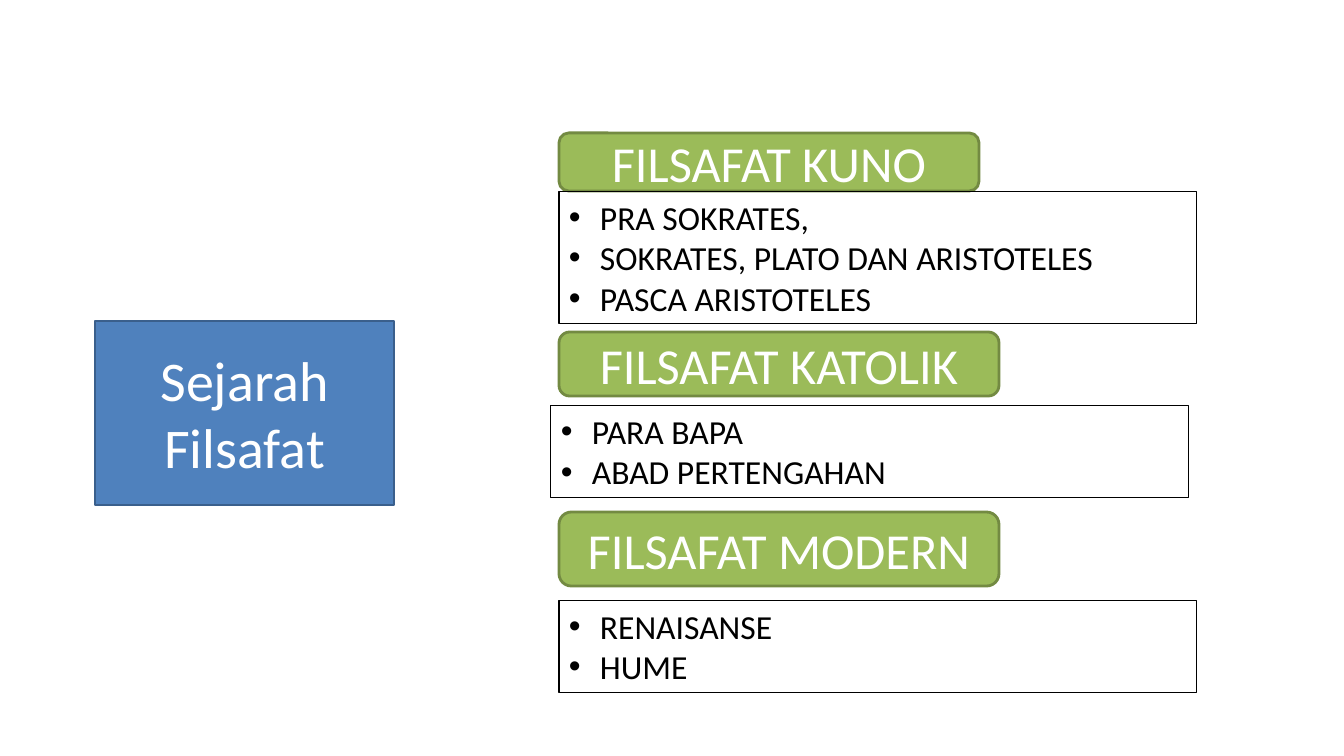
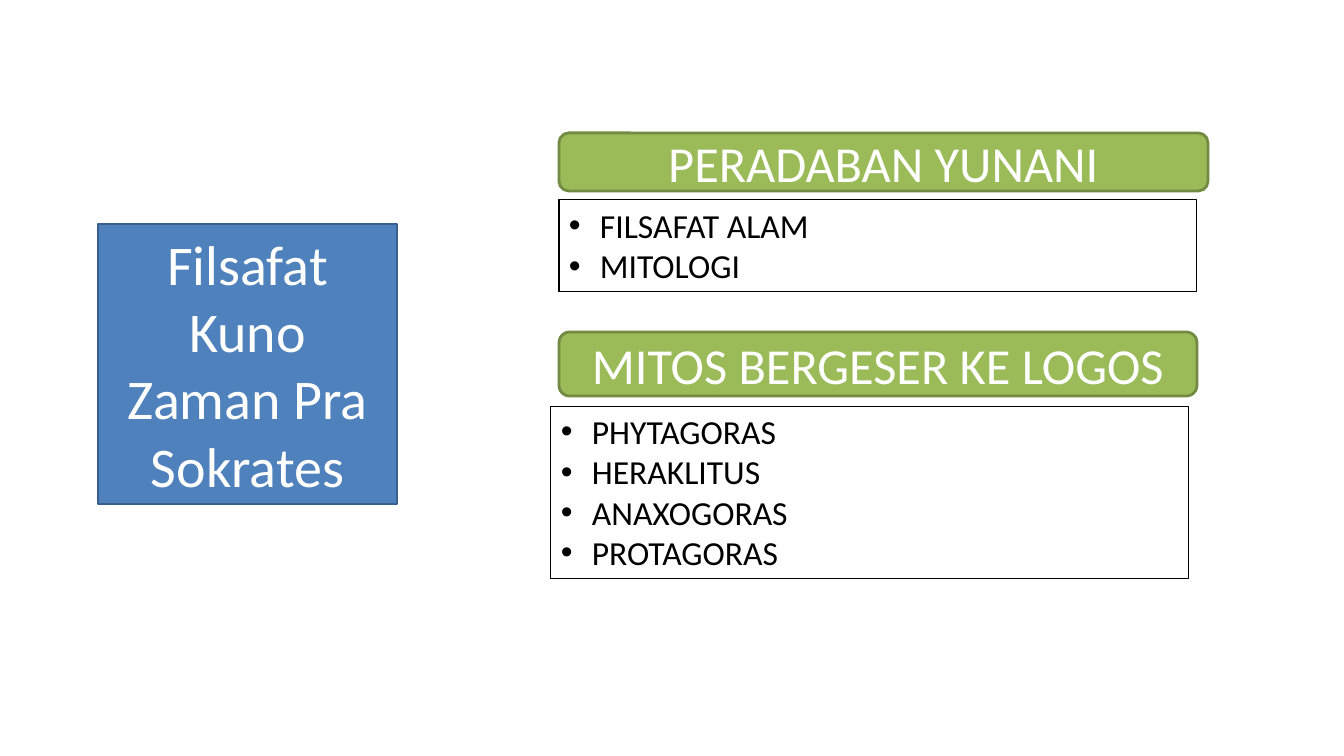
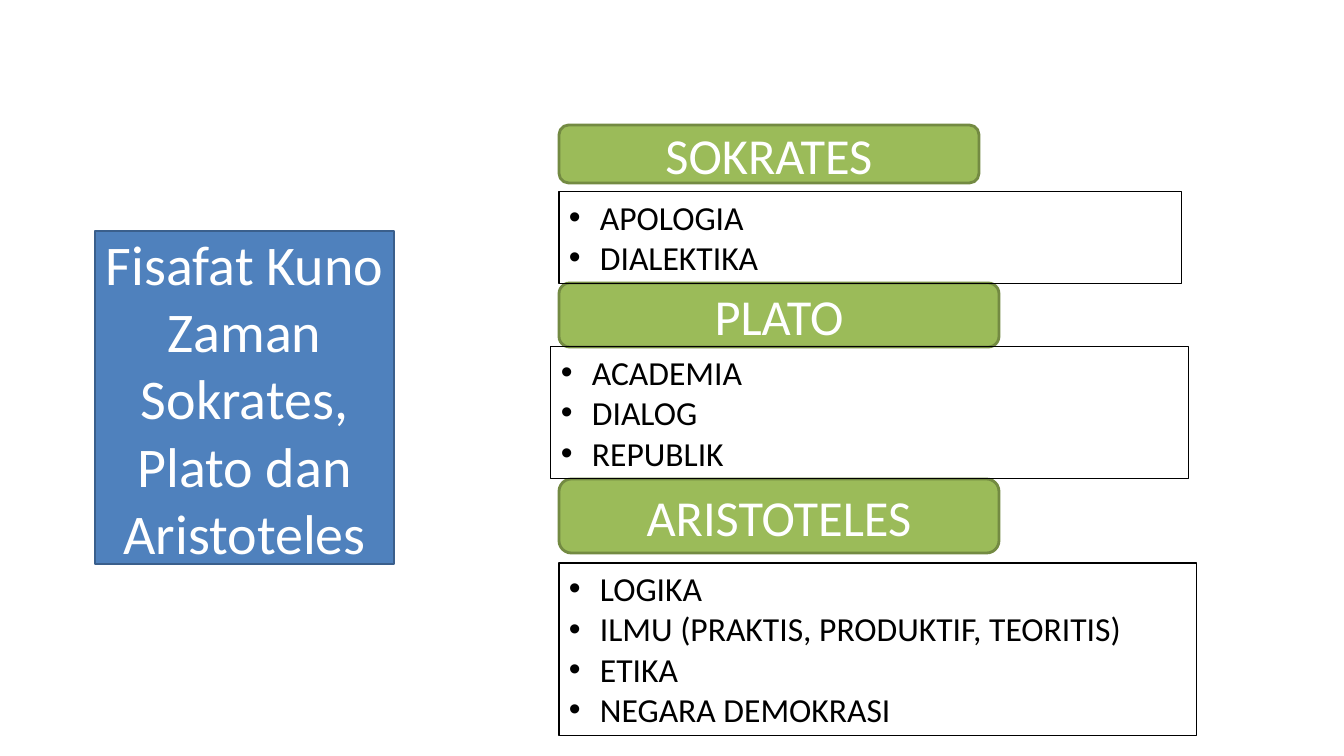
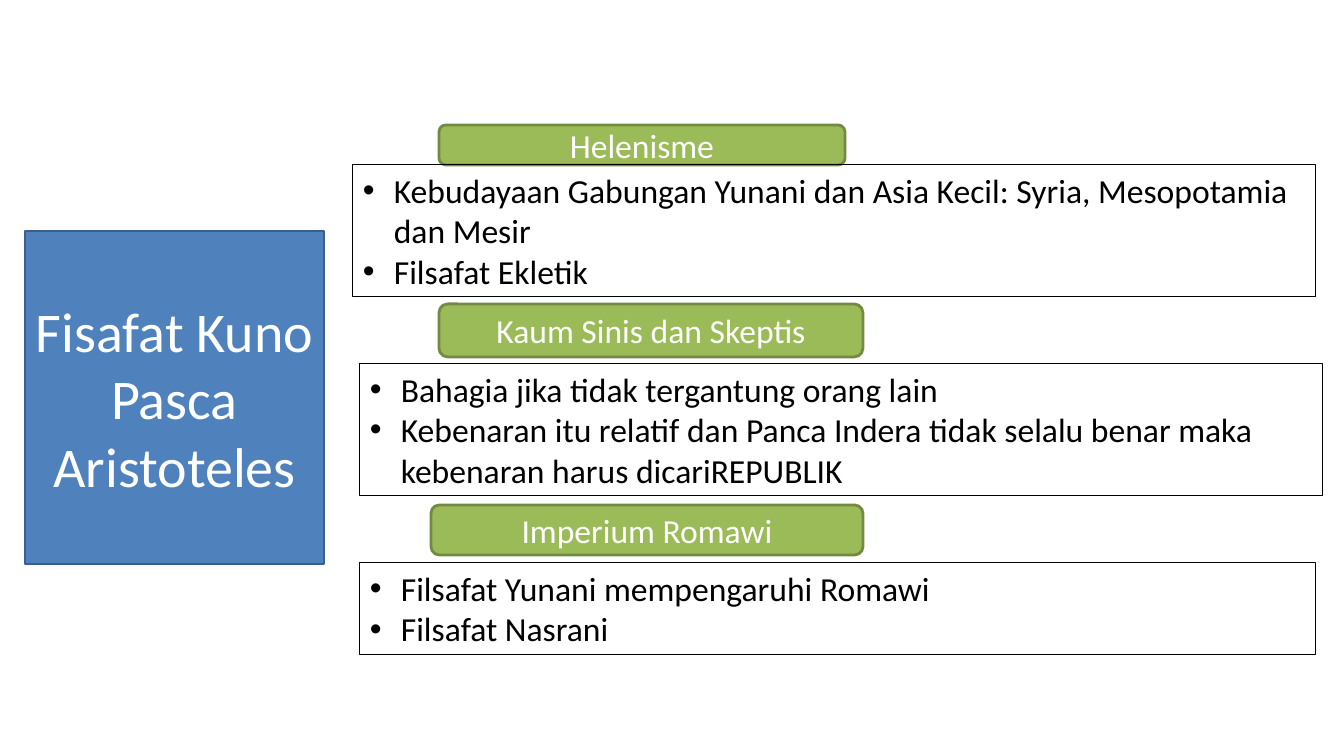
import pptx
import pptx.dml.color
import pptx.enum.shapes
import pptx.enum.text
import pptx.oxml.ns
import pptx.util
from lxml import etree

RGBColor = pptx.dml.color.RGBColor
BLUE = RGBColor(0x4F, 0x81, 0xBD)
BLUE_LINE = RGBColor(0x3A, 0x5F, 0x8C)
GREEN = RGBColor(0x9B, 0xBB, 0x59)
GREEN_LINE = RGBColor(0x73, 0x8A, 0x42)
WHITE = RGBColor(0xFF, 0xFF, 0xFF)
BLACK = RGBColor(0x00, 0x00, 0x00)

FONT = "Calibri"
EMU_PER_PX = 12192000 / 1344
BULLET_INDENT = 31
TITLE_W = 299
TITLE_ONLY = 5

ALIGN = pptx.enum.text.PP_ALIGN
ANCHOR = pptx.enum.text.MSO_ANCHOR
AUTO_SIZE = pptx.enum.text.MSO_AUTO_SIZE


def px(*lengths):
    return [pptx.util.Emu(round(n * EMU_PER_PX)) for n in lengths]


def write(sp, lines, size=24, color=WHITE, line_color=BLACK, line_width=2, fill=None,
          align=ALIGN.CENTER, anchor=ANCHOR.MIDDLE, fit=AUTO_SIZE.NONE, bullet=False):
    """Colour a shape and fill it with one paragraph per line."""
    if fill is None:
        sp.fill.background()
    else:
        sp.fill.solid()
        sp.fill.fore_color.rgb = fill
    sp.line.color.rgb = line_color
    sp.line.width = pptx.util.Pt(line_width)
    tf = sp.text_frame
    tf.word_wrap = True
    tf.auto_size = fit
    tf.vertical_anchor = anchor
    for i, line in enumerate(lines):
        p = tf.add_paragraph() if i else tf.paragraphs[0]
        p.alignment = align
        if bullet:
            indent = px(BULLET_INDENT)[0]
            pPr = p._p.get_or_add_pPr()
            pPr.set("marL", str(indent))
            pPr.set("indent", str(-indent))
            etree.SubElement(pPr, pptx.oxml.ns.qn("a:buFont")).set("typeface", "Arial")
            etree.SubElement(pPr, pptx.oxml.ns.qn("a:buChar")).set("char", "•")
        r = p.add_run()
        r.text = line
        r.font.name = FONT
        r.font.size = pptx.util.Pt(size)
        r.font.color.rgb = color


# Each slide: title, its (left, top, height), heading size, and its groups.
# Each group: heading, heading box, list box, list items; boxes are left, top, width, height.
SLIDES = [
    ("Sejarah Filsafat", (95, 321, 184), 36, [
        ("FILSAFAT KUNO", (559, 133, 420, 58), (559, 192, 638, 132),
         ["PRA SOKRATES,", "SOKRATES, PLATO DAN ARISTOTELES", "PASCA ARISTOTELES"]),
        ("FILSAFAT KATOLIK", (559, 332, 440, 64), (551, 406, 638, 92),
         ["PARA BAPA", "ABAD PERTENGAHAN"]),
        ("FILSAFAT MODERN", (559, 512, 440, 74), (559, 601, 638, 92),
         ["RENAISANSE", "HUME"]),
    ]),
    ("Filsafat Kuno Zaman Pra Sokrates", (98, 224, 280), 36, [
        ("PERADABAN YUNANI", (559, 133, 649, 58), (559, 200, 638, 92),
         ["FILSAFAT ALAM", "MITOLOGI"]),
        ("MITOS BERGESER KE LOGOS", (559, 332, 638, 64), (551, 406, 638, 173),
         ["PHYTAGORAS", "HERAKLITUS", "ANAXOGORAS", "PROTAGORAS"]),
    ]),
    ("Fisafat Kuno Zaman Sokrates, Plato dan Aristoteles", (95, 231, 333), 36, [
        ("SOKRATES", (559, 125, 420, 58), (559, 192, 623, 92),
         ["APOLOGIA", "DIALEKTIKA"]),
        ("PLATO", (559, 283, 440, 64), (551, 347, 638, 132),
         ["ACADEMIA", "DIALOG", "REPUBLIK"]),
        ("ARISTOTELES", (559, 479, 440, 74), (559, 563, 638, 173),
         ["LOGIKA", "ILMU (PRAKTIS, PRODUKTIF, TEORITIS)", "ETIKA", "NEGARA DEMOKRASI"]),
    ]),
    ("Fisafat Kuno Pasca Aristoteles", (25, 231, 333), 24, [
        ("Helenisme", (439, 125, 406, 40), (353, 165, 963, 132),
         ["Kebudayaan Gabungan Yunani dan Asia Kecil: Syria, Mesopotamia dan Mesir",
          "Filsafat Ekletik"]),
        ("Kaum Sinis dan Skeptis", (439, 304, 424, 53), (360, 364, 963, 132),
         ["Bahagia jika tidak tergantung orang lain",
          "Kebenaran itu relatif dan Panca Indera tidak selalu benar maka "
          "kebenaran harus dicariREPUBLIK"]),
        ("Imperium Romawi", (431, 505, 432, 50), (360, 563, 956, 92),
         ["Filsafat Yunani mempengaruhi Romawi", "Filsafat Nasrani"]),
    ]),
]

prs = pptx.Presentation()
prs.slide_width, prs.slide_height = px(1344, 756)

for title, (left, top, height), heading_size, groups in SLIDES:
    s = prs.slides.add_slide(prs.slide_layouts[TITLE_ONLY])
    sp = s.shapes.title
    sp.left, sp.top, sp.width, sp.height = px(left, top, TITLE_W, height)
    write(sp, [title], size=40, fill=BLUE, line_color=BLUE_LINE)

    for heading, heading_box, list_box, items in groups:
        sp = s.shapes.add_shape(pptx.enum.shapes.MSO_SHAPE.ROUNDED_RECTANGLE, *px(*heading_box))
        sp.shadow.inherit = False
        write(sp, [heading], size=heading_size, fill=GREEN, line_color=GREEN_LINE)

    for heading, heading_box, list_box, items in groups:
        sp = s.shapes.add_textbox(*px(*list_box))
        write(sp, items, color=BLACK, line_width=0.75, align=ALIGN.LEFT, anchor=ANCHOR.TOP,
              fit=AUTO_SIZE.SHAPE_TO_FIT_TEXT, bullet=True)

prs.save("out.pptx")
